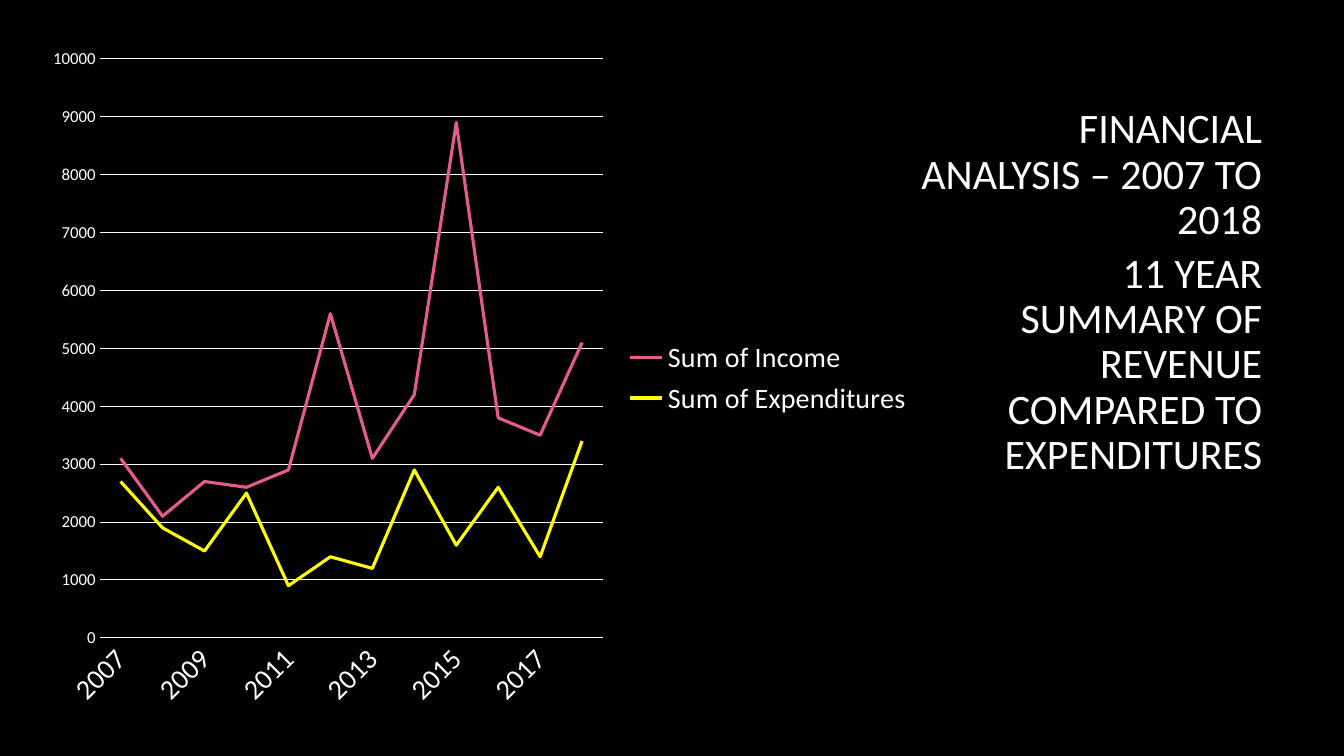
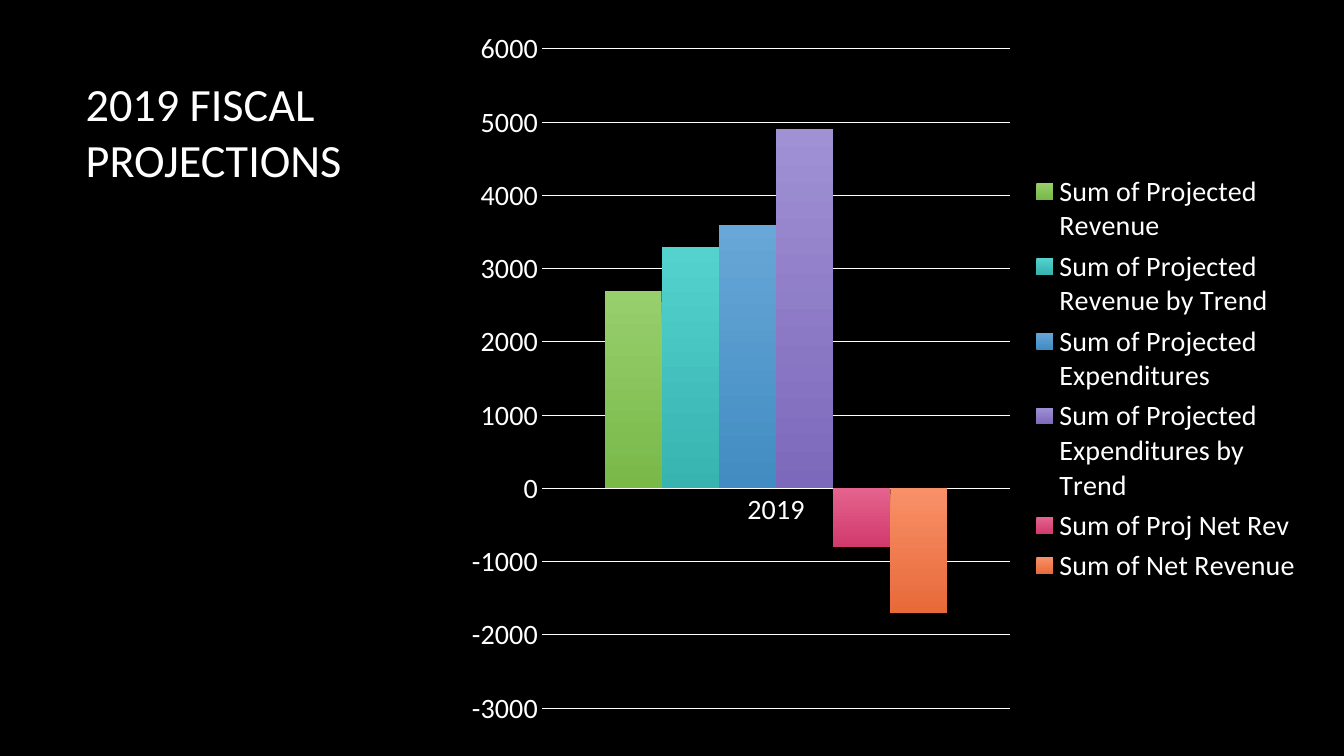
"""Build two financial slides: a revenue history and the 2019 projections."""
from pptx import Presentation
from pptx.chart.data import CategoryChartData
from pptx.dml.color import RGBColor
from pptx.enum.chart import XL_CHART_TYPE, XL_LEGEND_POSITION, XL_TICK_MARK
from pptx.enum.text import MSO_ANCHOR, MSO_AUTO_SIZE, PP_ALIGN
from pptx.oxml import parse_xml
from pptx.oxml.ns import nsdecls
from pptx.util import Inches, Pt

FONT = "Calibri"
BLACK = RGBColor(0x00, 0x00, 0x00)
WHITE = RGBColor(0xFF, 0xFF, 0xFF)
PINK = RGBColor(0xE4, 0x5C, 0x8A)
YELLOW = RGBColor(0xFF, 0xFF, 0x00)
GREENS = RGBColor(0x97, 0xCF, 0x6D), RGBColor(0x79, 0xB9, 0x48)
TEALS = RGBColor(0x53, 0xD2, 0xCE), RGBColor(0x37, 0xB3, 0xB0)
BLUES = RGBColor(0x68, 0xA7, 0xD7), RGBColor(0x41, 0x8C, 0xC2)
PURPLES = RGBColor(0xA0, 0x90, 0xD4), RGBColor(0x7D, 0x69, 0xBB)
ROSES = RGBColor(0xE5, 0x63, 0x8E), RGBColor(0xD1, 0x3A, 0x6D)
ORANGES = RGBColor(0xF9, 0x90, 0x68), RGBColor(0xE7, 0x6A, 0x39)

HISTORY_TITLE = [
    "FINANCIAL ANALYSIS – 2007 TO 2018",
    "11 YEAR SUMMARY OF REVENUE COMPARED TO EXPENDITURES",
]
YEARS = [str(year) for year in range(2007, 2019)]
HISTORY = [
    ("Sum of Income", PINK,
     [3100, 2100, 2700, 2600, 2900, 5600, 3100, 4200, 8900, 3800, 3500, 5100]),
    ("Sum of Expenditures", YELLOW,
     [2700, 1900, 1500, 2500, 900, 1400, 1200, 2900, 1600, 2600, 1400, 3400]),
]
PROJECTION_TITLE = ["2019 FISCAL PROJECTIONS"]
PROJECTIONS = [
    ("Sum of Projected Revenue", GREENS, [2700]),
    ("Sum of Projected Revenue by Trend", TEALS, [3300]),
    ("Sum of Projected Expenditures", BLUES, [3600]),
    ("Sum of Projected Expenditures by Trend", PURPLES, [4900]),
    ("Sum of Proj Net Rev", ROSES, [-800]),
    ("Sum of Net Revenue", ORANGES, [-1700]),
]


def style_font(font, size):
    font.name, font.size, font.bold = FONT, Pt(size), False
    font.color.rgb = WHITE


def style_line(line, color, width):
    line.color.rgb = color
    line.width = Pt(width)


def add_title(slide, texts, box, size, align=PP_ALIGN.LEFT, anchor=MSO_ANCHOR.TOP,
              spacing=1.0, after=0):
    sp = slide.shapes.title
    sp.left, sp.top, sp.width, sp.height = map(Inches, box)
    tf = sp.text_frame
    tf.word_wrap, tf.auto_size = True, MSO_AUTO_SIZE.NONE
    tf.vertical_anchor = anchor
    for i, text in enumerate(texts):
        p = tf.add_paragraph() if i else tf.paragraphs[0]
        p.alignment, p.line_spacing = align, spacing
        p.space_after = Pt(after)
        r = p.add_run()
        r.text = text
        style_font(r.font, size)
    return tf


def add_chart(slide, kind, box, categories, series, limits, value_size):
    data = CategoryChartData()
    data.categories = categories
    for name, _, values in series:
        data.add_series(name, values)
    chart = slide.shapes.add_chart(kind, *map(Inches, box), data).chart
    chart.has_title = False
    style_font(chart.font, 10)
    chart.has_legend = True
    chart.legend.position = XL_LEGEND_POSITION.RIGHT
    chart.legend.include_in_layout = False
    style_font(chart.legend.font, 20)
    cat, val = chart.category_axis, chart.value_axis
    for axis, size in ((cat, 20), (val, value_size)):
        axis.major_tick_mark = axis.minor_tick_mark = XL_TICK_MARK.NONE
        style_font(axis.tick_labels.font, size)
    style_line(cat.format.line, WHITE, 0.75)
    val.format.line.fill.background()
    val.has_major_gridlines = True
    style_line(val.major_gridlines.format.line, WHITE, 0.75)
    val.minimum_scale, val.maximum_scale = limits
    val.major_unit = 1000
    chart.plots[0].vary_by_categories = False
    return chart


def build_history(slide):
    tf = add_title(slide, HISTORY_TITLE, (8.95, 0.7, 3.67, 4.1), 30,
                   align=PP_ALIGN.RIGHT, anchor=MSO_ANCHOR.BOTTOM, spacing=0.9, after=6)
    tf.paragraphs[1]._p.get_or_add_pPr().set("indent", str(Inches(0.45)))
    chart = add_chart(slide, XL_CHART_TYPE.LINE, (0.35, 0.35, 8.81, 6.8),
                      YEARS, HISTORY, (0, 10000), 12)
    for line, (_, color, _) in zip(chart.plots[0].series, HISTORY):
        line.smooth = False
        style_line(line.format.line, color, 2.25)
    axis = chart.category_axis._element
    axis.txPr.bodyPr.set("rot", "-2700000")
    skip = parse_xml(f'<c:tickLblSkip {nsdecls("c")} val="2"/>')
    axis.find(skip.tag.replace("tickLblSkip", "noMultiLvlLbl")).addprevious(skip)


def build_projections(slide):
    add_title(slide, PROJECTION_TITLE, (0.75, 0.7, 2.83, 5.46), 33)
    chart = add_chart(slide, XL_CHART_TYPE.COLUMN_CLUSTERED, (4.51, 0.17, 8.51, 7.17),
                      ["2019"], PROJECTIONS, (-3000, 6000), 20)
    plot = chart.plots[0]
    plot.gap_width, plot.overlap = 219, 0
    for bar, (_, colors, _) in zip(plot.series, PROJECTIONS):
        bar.invert_if_negative = False
        fill = bar.format.fill
        fill.gradient()
        fill.gradient_angle = 270
        for stop, color in zip(fill.gradient_stops, colors):
            stop.color.rgb = color


def main():
    prs = Presentation()
    prs.slide_width, prs.slide_height = Inches(13.33), Inches(7.5)
    fill = prs.slide_master.background.fill
    fill.solid()
    fill.fore_color.rgb = BLACK
    for build in (build_history, build_projections):
        build(prs.slides.add_slide(prs.slide_layouts[5]))
    prs.save("out.pptx")


if __name__ == "__main__":
    main()
